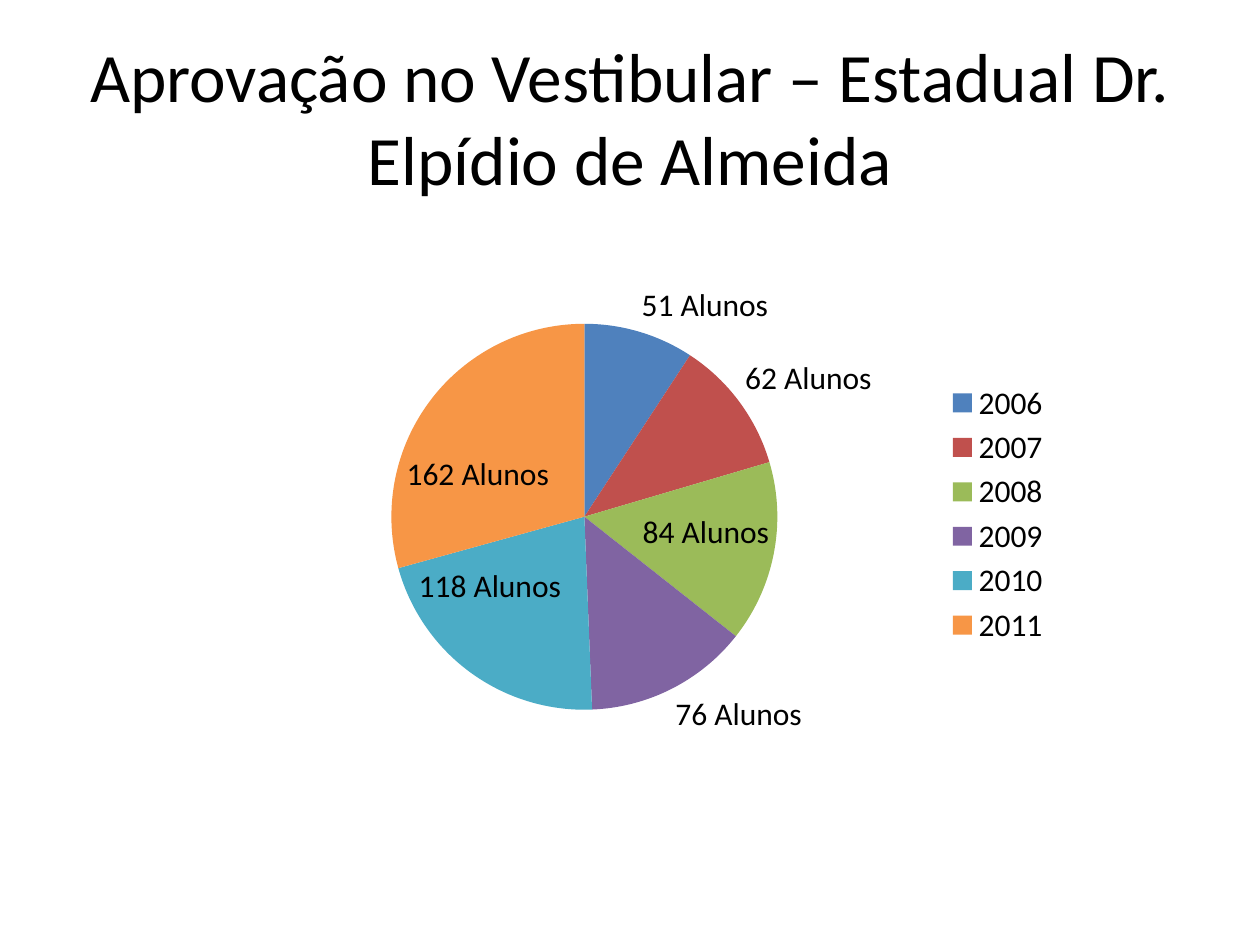
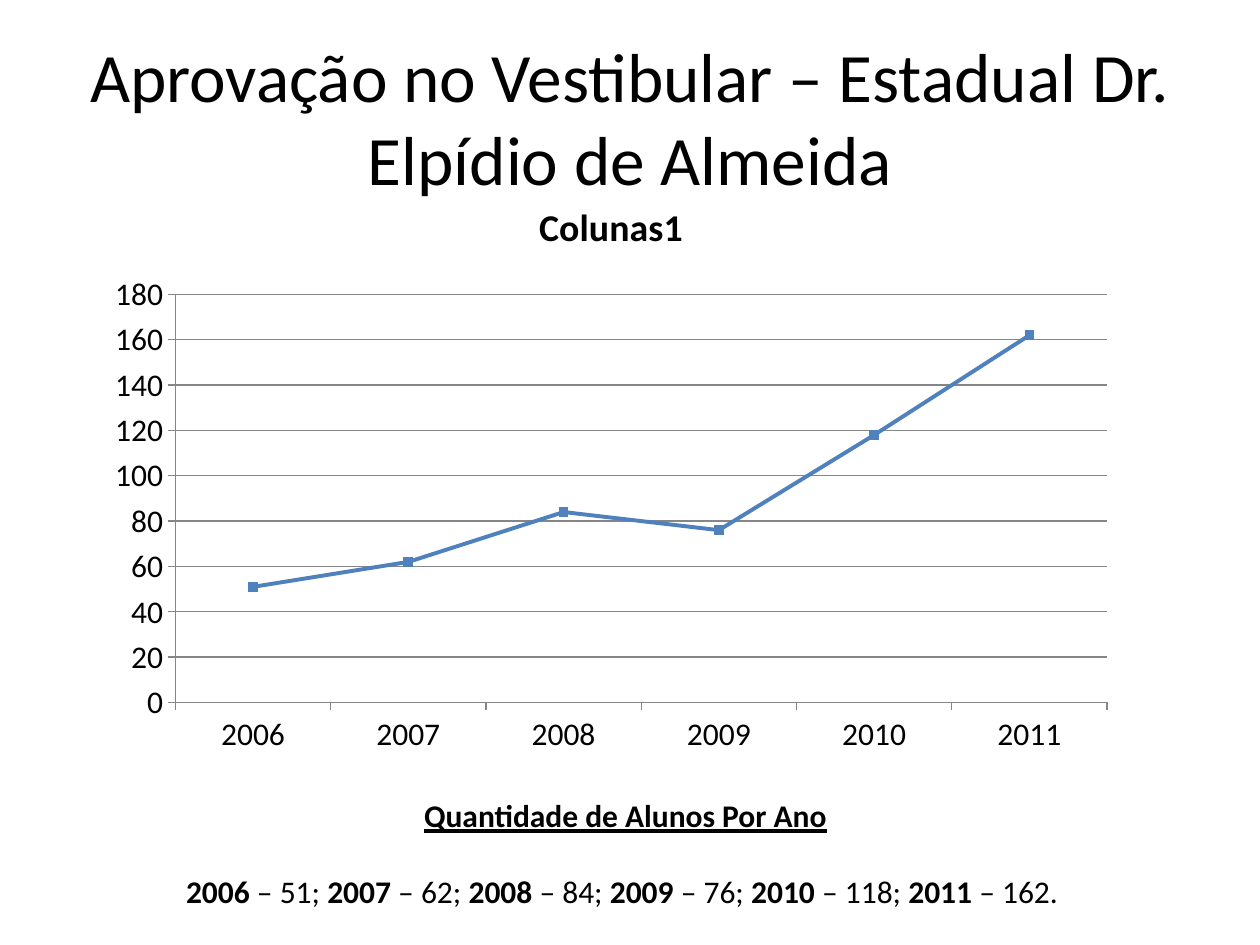
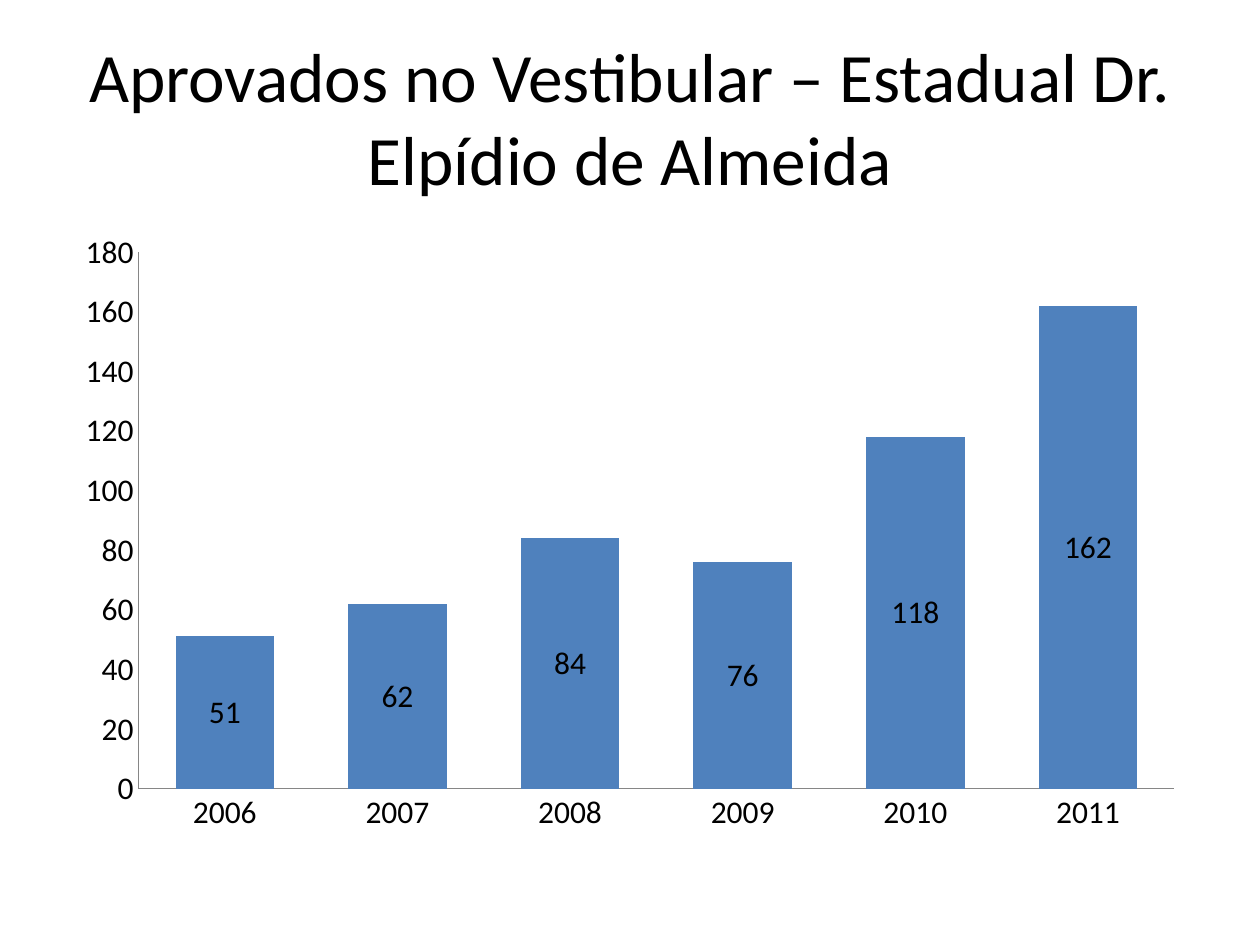
from lxml import etree
from pptx import Presentation
from pptx.chart.data import CategoryChartData
from pptx.dml.color import RGBColor
from pptx.enum.chart import (XL_CHART_TYPE, XL_LABEL_POSITION, XL_LEGEND_POSITION,
                             XL_MARKER_STYLE, XL_TICK_MARK)
from pptx.enum.text import MSO_ANCHOR, MSO_AUTO_SIZE, PP_ALIGN
from pptx.oxml.ns import qn
from pptx.util import Inches, Pt

PIE, LINE, COLUMN = (XL_CHART_TYPE.PIE, XL_CHART_TYPE.LINE_MARKERS,
                     XL_CHART_TYPE.COLUMN_STACKED)
BEST, MIDDLE = XL_LABEL_POSITION.BEST_FIT, XL_LABEL_POSITION.CENTER
RIGHT = XL_LEGEND_POSITION.RIGHT
SQUARE = XL_MARKER_STYLE.SQUARE
OUT, NONE = XL_TICK_MARK.OUTSIDE, XL_TICK_MARK.NONE

# Shared look and data
FONT = "Calibri"
COLORS = {"text": "000000", "back": "FFFFFF", "axis": "868686", "blue": "4F81BD",
          "red": "C0504D", "green": "9BBB59", "purple": "8064A2",
          "teal": "4BACC6", "orange": "F79646"}
SLICES = ["blue", "red", "green", "purple", "teal", "orange"]
PASSED = {"2006": 51, "2007": 62, "2008": 84, "2009": 76, "2010": 118, "2011": 162}
SCHOOL = "no Vestibular – Estadual Dr. Elpídio de Almeida"


def color(name):
    return RGBColor.from_string(COLORS[name])


def style(font, size=18, bold=False, line=False):
    font.name, font.size = FONT, Pt(size)
    font.bold, font.underline = bold, line
    font.color.rgb = color("text")


def write(para, text, **look):
    run = para.add_run()
    run.text = text
    style(run.font, **look)


def add_slide(deck, title):
    slide = deck.slides.add_slide(deck.slide_layouts[5])
    slide.background.fill.solid()
    slide.background.fill.fore_color.rgb = color("back")
    head = slide.shapes.title
    head.left, head.top = Inches(0.5), Inches(0.3)
    head.width, head.height = Inches(9), Inches(1.25)
    frame = head.text_frame
    frame.word_wrap, frame.auto_size = True, MSO_AUTO_SIZE.NONE
    frame.vertical_anchor = MSO_ANCHOR.MIDDLE
    para = frame.paragraphs[0]
    para.alignment = PP_ALIGN.CENTER
    write(para, title, size=39.6)
    return slide


def set_plot(chart, **box):
    """Fix the inner plot area, as fractions of the chart."""
    area = chart.plots[0]._element.getparent()
    for old in area.findall(qn("c:layout")):
        area.remove(old)
    layout = etree.Element(qn("c:layout"))
    manual = etree.SubElement(layout, qn("c:manualLayout"))
    rules = {"layoutTarget": "inner", "xMode": "edge", "yMode": "edge", **box}
    for tag, val in rules.items():
        etree.SubElement(manual, qn("c:" + tag)).set("val", str(val))
    area.insert(0, layout)


def add_chart(slide, kind, name, box):
    data = CategoryChartData()
    data.categories = list(PASSED)
    data.add_series(name, list(PASSED.values()))
    chart = slide.shapes.add_chart(kind, *map(Inches, box), data).chart
    style(chart.font)
    chart.has_title = chart.has_legend = False
    return chart


def set_axes(chart, tick, grid):
    chart.value_axis.has_major_gridlines = grid
    lines = [chart.value_axis.format.line, chart.category_axis.format.line]
    if grid:
        lines.append(chart.value_axis.major_gridlines.format.line)
    for line in lines:
        line.color.rgb = color("axis")
        line.width = Pt(0.75)
    for axis in (chart.value_axis, chart.category_axis):
        axis.major_tick_mark, axis.minor_tick_mark = tick, NONE


def fill(item, name):
    item.format.fill.solid()
    item.format.fill.fore_color.rgb = color(name)


def add_pie(slide):
    chart = add_chart(slide, PIE, "Series 1", (1.77, 1.86, 6.67, 4.44))
    set_plot(chart, x=0.2, y=0.16, w=0.46, h=0.69)
    chart.has_legend = True
    chart.legend.position = RIGHT
    chart.legend.include_in_layout = False
    style(chart.legend.font)
    series = chart.plots[0].series[0]
    for i, (name, count) in enumerate(zip(SLICES, PASSED.values())):
        point = series.points[i]
        fill(point, name)
        write(point.data_label.text_frame.paragraphs[0], f"{count} Alunos")
        point.data_label.position = BEST
    labels = series.data_labels
    labels.show_value = labels.show_category_name = True
    labels.position = BEST
    for flag in labels._element.iter(qn("c:showCatName")):
        flag.set("val", "1")


def add_line(slide):
    chart = add_chart(slide, LINE, "Colunas1", (0.75, 1.39, 8.2, 4.68))
    chart.has_title = True
    write(chart.chart_title.text_frame.paragraphs[0], "Colunas1", size=21.6, bold=True)
    set_axes(chart, OUT, True)
    chart.plots[0].vary_by_categories = False
    series = chart.plots[0].series[0]
    series.smooth = False
    series.format.line.color.rgb = color("blue")
    series.format.line.width = Pt(2.25)
    series.marker.style, series.marker.size = SQUARE, 5
    fill(series.marker, "blue")
    series.marker.format.line.color.rgb = color("blue")


def add_columns(slide):
    chart = add_chart(slide, COLUMN, "Series 1", (0.5, 1.75, 9, 4.95))
    set_axes(chart, NONE, False)
    plot = chart.plots[0]
    plot.vary_by_categories = False
    plot.gap_width, plot.overlap = 75, 100
    fill(plot.series[0], "blue")
    labels = plot.series[0].data_labels
    labels.show_value, labels.position = True, MIDDLE
    style(labels.font)


def add_counts(slide):
    box = slide.shapes.add_textbox(Inches(0.28), Inches(6.27), Inches(9.37), Inches(1.01))
    frame = box.text_frame
    frame.word_wrap = True
    frame.auto_size = MSO_AUTO_SIZE.SHAPE_TO_FIT_TEXT
    head, body = frame.paragraphs[0], frame.add_paragraph()
    head.alignment = body.alignment = PP_ALIGN.CENTER
    write(head, "Quantidade de Alunos Por Ano", bold=True, line=True)
    body.space_before = Pt(21.6)
    last = list(PASSED)[-1]
    for year, count in PASSED.items():
        write(body, year, bold=True)
        write(body, f" – {count}" + (". " if year == last else "; "))


def main():
    deck = Presentation()
    deck.slide_width, deck.slide_height = Inches(10), Inches(7.5)

    # Share of each year
    add_pie(add_slide(deck, f"Aprovação {SCHOOL}"))

    # Trend over the years
    trend = add_slide(deck, f"Aprovação {SCHOOL}")
    add_line(trend)
    add_counts(trend)

    # Count per year
    add_columns(add_slide(deck, f"Aprovados {SCHOOL}"))

    deck.save("out.pptx")


if __name__ == "__main__":
    main()
